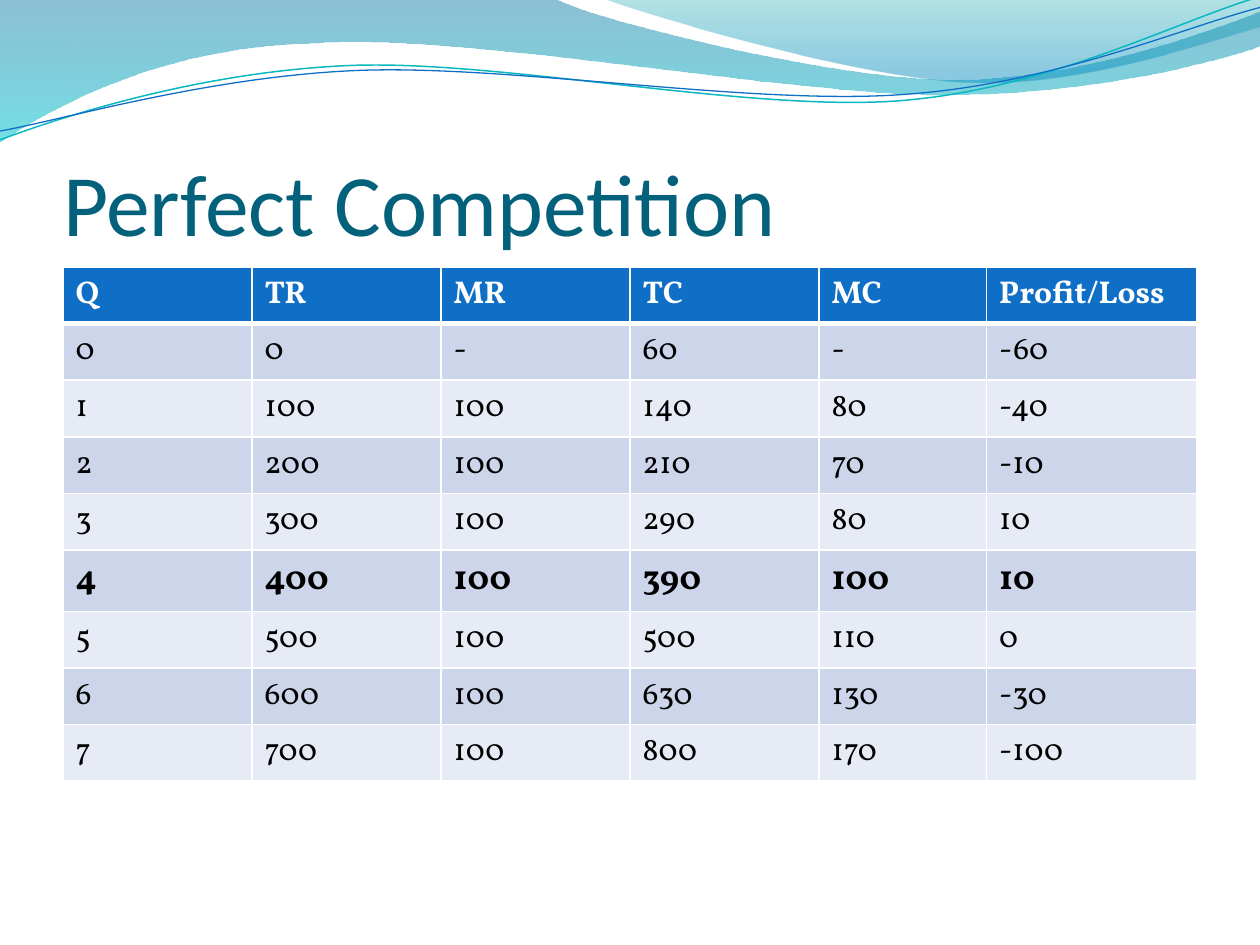
import math

import lxml.etree
import pptx
import pptx.util
import pptx.dml.color
import pptx.enum.text
import pptx.oxml
import pptx.oxml.ns

Inches, Pt = pptx.util.Inches, pptx.util.Pt
qn = pptx.oxml.ns.qn

COLORS = {
    "title": "04617B", "header": "0F6FC6", "band_dark": "CCD5EA", "band_light": "E7EBF5",
    "white": "FFFFFF", "black": "000000", "wave_blue": "0074A1", "wave_cyan": "00C6CF",
    "crest_teal": "00A1A9", "crest_blue": "008BBF", "line_teal": "0AB8BF", "line_blue": "0F6FC6",
}

# Outlines: a start point, then straight (2 numbers) or Bezier (6 numbers) segments
WAVE = [(0, 0), (4.4, -0.01), (4.76, 0.17, 6.64, 0.63, 7.58, 0.63),
        (8.53, 0.63, 9.58, 0.26, 10, 0.09), (10.01, 0.36),
        (9.83, 0.44, 8.7, 0.76, 7.46, 0.75), (6.22, 0.75, 3.82, 0.28, 2.57, 0.34),
        (1.29, 0.36, 0.46, 0.83, -0.01, 1.13), (0, 0)]
CREST = [(4.79, -0.01), (5.09, 0.11, 6.82, 0.62, 7.69, 0.65),
         (8.56, 0.69, 9.61, 0.32, 10, 0.21), (10, 0), (4.79, -0.01)]
TEAL_LINE = [(0, 1.11), (0.48, 0.93, 1.58, 0.57, 2.77, 0.52),
             (3.95, 0.47, 5.93, 0.89, 7.13, 0.8), (8.33, 0.71, 9.38, 0.15, 9.98, -0.02)]
BLUE_LINE = [(0, 1.04), (0.47, 0.96, 1.64, 0.61, 2.83, 0.56),
             (4.03, 0.51, 5.97, 0.84, 7.17, 0.75), (8.36, 0.67, 9.41, 0.21, 10, 0.06)]
LINE_TILT = -2.7  # degrees

ROWS = [
    ["Q", "TR", "MR", "TC", "MC", "Profit/Loss"],
    ["0", "0", "-", "60", "-", "-60"],
    ["1", "100", "100", "140", "80", "-40"],
    ["2", "200", "100", "210", "70", "-10"],
    ["3", "300", "100", "290", "80", "10"],
    ["4", "400", "100", "390", "100", "10"],
    ["5", "500", "100", "500", "110", "0"],
    ["6", "600", "100", "630", "130", "-30"],
    ["7", "700", "100", "800", "170", "-100"],
]
COL_WIDTHS = [1.5, 1.5, 1.5, 1.5, 1.33, 1.67]
BEST_ROW = 5  # output with the highest profit, emphasised


def rgb(name):
    return pptx.dml.color.RGBColor.from_string(COLORS[name])


def turn(point, pivot, degrees):
    a = math.radians(degrees)
    dx, dy = point[0] - pivot[0], point[1] - pivot[1]
    return (pivot[0] + dx * math.cos(a) - dy * math.sin(a),
            pivot[1] + dx * math.sin(a) + dy * math.cos(a))


def add_outline(s, x, y, outline, close, tilt=0, pivot=(0, 0)):
    """Draw an outline; a tilted one is levelled first and then rotated as a shape."""
    points = [turn(seg[k:k + 2], pivot, -tilt) for seg in outline for k in range(0, len(seg), 2)]
    points = [(Inches(x + px), Inches(y + py)) for px, py in points]
    builder = s.shapes.build_freeform(*points[0])
    builder.add_line_segments(points[1:], close=close)
    sp = builder.convert_to_shape()
    sp.shadow.inherit = False
    sp.rotation = tilt % 360
    # Merge each run of three points into one Bezier segment
    lines = iter(list(sp.element.spPr.iter(qn("a:lnTo"))))
    for seg in outline[1:]:
        first = next(lines)
        if len(seg) == 6:
            first.tag = qn("a:cubicBezTo")
            for _ in range(2):
                line = next(lines)
                first.append(line[0])
                line.getparent().remove(line)
    return sp


def add_waves(s, x, y):
    # Translucent gradient bands: (colour, position, opacity in percent)
    for outline, stops in (
        (WAVE, [("wave_blue", 0, 45), ("wave_cyan", 1, 55)]),
        (CREST, [("crest_teal", 0, 30), ("crest_blue", 0.8, 45)]),
    ):
        sp = add_outline(s, x, y, outline, True)
        sp.line.fill.background()
        sp.fill.gradient()
        sp.fill.gradient_angle = 270
        for stop, (color, position, _) in zip(sp.fill.gradient_stops, stops):
            stop.color.rgb = rgb(color)
            stop.position = position
        for clr, (_, _, opacity) in zip(sp.element.spPr.iter(qn("a:srgbClr")), stops):
            lxml.etree.SubElement(clr, qn("a:alpha")).set("val", str(opacity * 1000))
    # Thin tilted lines
    for outline, color, width, pivot in (
        (TEAL_LINE, "line_teal", 0.85, (4.99, 0.58)),
        (BLUE_LINE, "line_blue", 0.75, (5, 0.59)),
    ):
        sp = add_outline(s, x, y, outline, False, LINE_TILT, pivot)
        sp.fill.background()
        sp.line.color.rgb = rgb(color)
        sp.line.width = Pt(width)


def format_run(r, font, size, color, bold=False):
    r.font.name = font
    r.font.size = Pt(size)
    r.font.bold = bold
    r.font.color.rgb = rgb(color)


def add_title(s, x, y, w, h, text):
    sp = s.shapes.title
    sp.left, sp.top, sp.width, sp.height = Inches(x), Inches(y), Inches(w), Inches(h)
    tf = sp.text_frame
    tf.text = text
    tf.word_wrap = True
    tf.auto_size = pptx.enum.text.MSO_AUTO_SIZE.NONE
    tf.vertical_anchor = pptx.enum.text.MSO_ANCHOR.BOTTOM
    tf.margin_left = tf.margin_right = tf.margin_bottom = 0
    tf.margin_top = Inches(0.05)
    p = tf.paragraphs[0]
    p.alignment = pptx.enum.text.PP_ALIGN.LEFT
    format_run(p.runs[0], "Calibri", 50, "title")
    s.shapes.element.append(sp.element)  # in front of the waves


def set_borders(cell, widths):
    """Give a cell white borders; they come before the fill in the XML."""
    tcPr = cell._tc.get_or_add_tcPr()
    for i, (side, width) in enumerate(zip("LRTB", widths)):
        ln = lxml.etree.Element(qn("a:ln" + side), w=str(Pt(width)))
        fill = lxml.etree.SubElement(ln, qn("a:solidFill"))
        lxml.etree.SubElement(fill, qn("a:srgbClr")).set("val", COLORS["white"])
        tcPr.insert(i, ln)


def add_cost_table(s, x, y, w, h):
    table = s.shapes.add_table(len(ROWS), len(COL_WIDTHS), Inches(x), Inches(y),
                               Inches(w), Inches(h)).table
    for col, width in zip(table.columns, COL_WIDTHS):
        col.width = Inches(width)
    for i, values in enumerate(ROWS):
        table.rows[i].height = Inches(h / len(ROWS))
        header = i == 0
        band = "header" if header else "band_dark" if i % 2 else "band_light"
        for j, value in enumerate(values):
            cell = table.cell(i, j)
            cell.text = value
            format_run(cell.text_frame.paragraphs[0].runs[0], "Vollkorn",
                       20 if i == BEST_ROW else 18, "white" if header else "black",
                       i in (0, BEST_ROW))
            cell.fill.solid()
            cell.fill.fore_color.rgb = rgb(band)
            set_borders(cell, (1, 1, 3 if i == 1 else 1, 3 if header else 1))


def main():
    prs = pptx.Presentation()
    prs.slide_width, prs.slide_height = Inches(10), Inches(7.5)
    s = prs.slides.add_slide(prs.slide_layouts[5])
    add_waves(s, 0, 0)
    add_title(s, 0.5, 0.77, 9, 1.25, "Perfect Competition")
    add_cost_table(s, 0.5, 2.12, 9, 3.68)
    prs.save("out.pptx")


if __name__ == "__main__":
    main()
